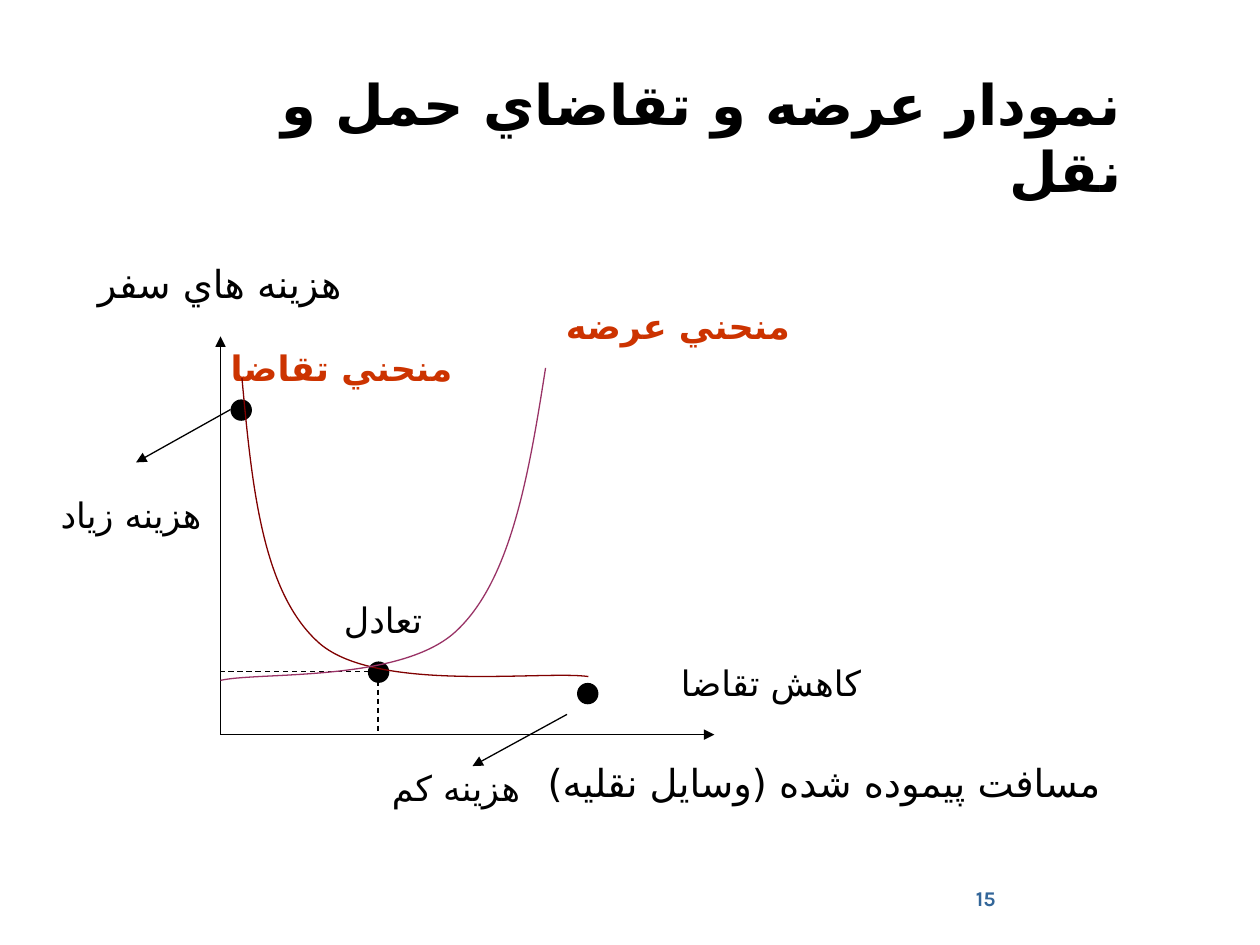
from lxml.etree import SubElement
from pptx import Presentation
from pptx.dml.color import RGBColor
from pptx.enum.dml import MSO_LINE
from pptx.enum.shapes import MSO_CONNECTOR, MSO_SHAPE
from pptx.enum.text import MSO_ANCHOR, PP_ALIGN
from pptx.oxml.ns import qn
from pptx.util import Inches, Pt

FONT = "Karla"
ARABIC_FONT = "DejaVu Sans"  # Karla has no Arabic letters
BLACK = "000000"
ORANGE = "CC3300"
DOT_SIZE = 0.17
ORIGIN = (1.75, 5.83)
EQUILIBRIUM = (3, 5.33)


def color(value):
    return RGBColor.from_string(value)


def write_text(shape, text, size=20, fill=BLACK, bold=False, align=PP_ALIGN.CENTER,
               anchor=MSO_ANCHOR.MIDDLE, wrap=False, rtl=False):
    frame = shape.text_frame
    frame.word_wrap = wrap
    frame.vertical_anchor = anchor
    paragraph = frame.paragraphs[0]
    paragraph.alignment = align
    if rtl:
        paragraph._p.get_or_add_pPr().set("rtl", "1")
    span = paragraph.add_run()
    span.text = text
    font = span.font
    font.name, font.size, font.bold = FONT, Pt(size), bold
    font.color.rgb = color(fill)
    SubElement(span._r.get_or_add_rPr(), qn("a:cs"), typeface=ARABIC_FONT)


def add_label(page, text, left, top, width, height=0.5, **style):
    """Text in an unfilled rectangle, so that one line may run past its sides."""
    box = page.shapes.add_shape(MSO_SHAPE.RECTANGLE, *map(Inches, (left, top, width, height)))
    box.shadow.inherit = False
    box.fill.background()
    box.line.fill.background()
    write_text(box, text, **style)


def add_line(page, start, end, arrow=False, dashed=False):
    line = page.shapes.add_connector(MSO_CONNECTOR.STRAIGHT, *map(Inches, start + end))
    line.line.color.rgb = color(BLACK)
    line.line.width = Pt(0.75)
    if dashed:
        line.line.dash_style = MSO_LINE.DASH
    if arrow:
        SubElement(line.line._get_or_add_ln(), qn("a:tailEnd"), type="triangle")
    SubElement(line._element.spPr, qn("a:effectLst"))


def add_dot(page, left, top):
    dot = page.shapes.add_shape(MSO_SHAPE.OVAL, *map(Inches, (left, top, DOT_SIZE, DOT_SIZE)))
    dot.shadow.inherit = False
    dot.fill.solid()
    dot.fill.fore_color.rgb = color(BLACK)
    dot.line.fill.background()


def add_curve(page, controls, stroke):
    """Draw joined cubic curves; each one shares its end with the next."""
    start, *rest = [tuple(map(Inches, point)) for point in controls]
    builder = page.shapes.build_freeform(*start)
    builder.add_line_segments(rest, close=False)
    curve = builder.convert_to_shape()
    # Turn every three straight segments into one cubic segment
    segments = list(curve._element.iter(qn("a:lnTo")))
    outline = segments[0].getparent()
    for first in range(0, len(segments), 3):
        cubic = SubElement(outline, qn("a:cubicBezTo"))
        for segment in segments[first:first + 3]:
            cubic.append(segment[0])
            outline.remove(segment)
    curve.shadow.inherit = False
    curve.fill.background()
    curve.line.color.rgb = color(stroke)
    curve.line.width = Pt(0.75)


def add_title(page):
    title = page.shapes.title
    title.left, title.top, title.width, title.height = map(Inches, (1.5, 0.42, 7.5, 1.25))
    write_text(title, "نمودار عرضه و تقاضاي حمل و نقل", size=32, bold=True,
               align=PP_ALIGN.RIGHT, anchor=MSO_ANCHOR.BOTTOM, wrap=True, rtl=True)


def main():
    deck = Presentation()
    deck.slide_width, deck.slide_height = Inches(10), Inches(7.5)
    page = deck.slides.add_slide(deck.slide_layouts[5])
    add_title(page)
    add_label(page, "15", 5.92, 6.92, 2.08, 0.41, size=12, fill="336699", bold=True,
              align=PP_ALIGN.RIGHT, wrap=True)

    # Axes with their names
    add_line(page, ORIGIN, (ORIGIN[0], 2.67), arrow=True)
    add_line(page, ORIGIN, (5.67, ORIGIN[1]), arrow=True)
    add_label(page, "هزينه هاي سفر", 1.08, 2, 1.33, size=22)
    add_label(page, "مسافت پيموده شده (وسايل نقليه)", 5.25, 6, 2.58, 0.42, size=22)

    # Marked points and their callouts
    for left, top in ((1.83, 3.17), (2.92, 5.25), (4.58, 5.42)):
        add_dot(page, left, top)
    add_line(page, (1.83, 3.25), (1.08, 3.67), arrow=True)
    add_line(page, (4.5, 5.67), (3.75, 6.08), arrow=True)
    for text, left, top in (("هزينه زياد", 0.5, 3.83), ("تعادل", 2.5, 4.67),
                            ("کاهش تقاضا", 5.58, 5.17), ("هزينه کم", 3.08, 6)):
        add_label(page, text, left, top, 1.08)

    # Curve names
    for text, left, top in (("منحني عرضه", 4.67, 2.33), ("منحني تقاضا", 2, 2.67)):
        add_label(page, text, left, top, 1.42, fill=ORANGE, bold=True)

    # Equilibrium guides
    add_line(page, EQUILIBRIUM, (EQUILIBRIUM[0], ORIGIN[1]), dashed=True)
    add_line(page, EQUILIBRIUM, (ORIGIN[0], EQUILIBRIUM[1]), dashed=True)

    # Demand and supply curves
    add_curve(page, [(1.92, 3), (2, 3.86), (2.08, 4.71), (2.54, 5.11),
                     (3, 5.5), (4.31, 5.32), (4.67, 5.37)], "800000")
    add_curve(page, [(4.33, 2.92), (4.2, 3.75), (4.06, 4.59), (3.63, 5),
                     (3.2, 5.42), (2.06, 5.33), (1.75, 5.4)], "993366")

    deck.save("out.pptx")


if __name__ == "__main__":
    main()
